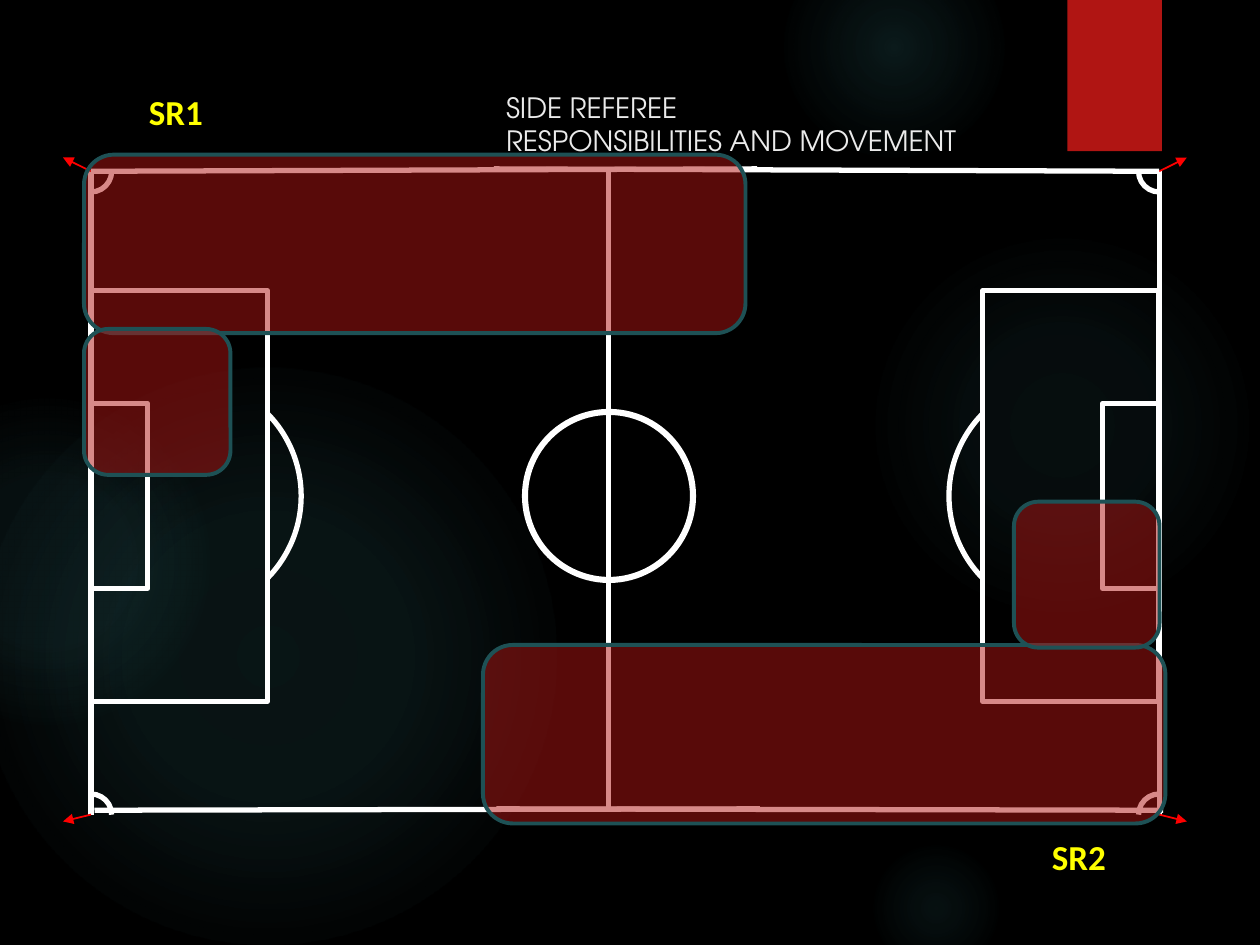
from lxml import etree
from pptx import Presentation
from pptx import util as u
from pptx.dml.color import RGBColor
from pptx.enum import shapes, text
from pptx.oxml import parse_xml
from pptx.oxml.ns import nsdecls, qn

Pt = u.Pt
Kind = shapes.MSO_SHAPE
COLORS = {
    "background": "000000", "glow": "50B9C1", "zone": "B01513", "zone edge": "1E5155",
    "marking": "FFFFFF", "arrow": "FF0000", "title": "EBEBEB", "label": "FFFF00",
}


def add_shape(kind, box, fill=None, edge=None, width=3):
    shape = slide.shapes.add_shape(kind, *[Pt(v) for v in box])
    shape.shadow.inherit = False
    if fill:
        shape.fill.solid()
        shape.fill.fore_color.rgb = RGBColor.from_string(COLORS[fill])
    else:
        shape.fill.background()
    if edge:
        shape.line.color.rgb = RGBColor.from_string(COLORS[edge])
        shape.line.width = Pt(width)
    else:
        shape.line.fill.background()
    return shape


def add_line(ends, color="marking", width=3):
    line = slide.shapes.add_connector(shapes.MSO_CONNECTOR.STRAIGHT, *[Pt(v) for v in ends])
    line.line.color.rgb = RGBColor.from_string(COLORS[color])
    line.line.width = Pt(width)
    etree.SubElement(line._element.spPr, qn("a:effectLst"))
    return line


deck = Presentation()
deck.slide_width, deck.slide_height = Pt(720), Pt(540)
slide = deck.slides.add_slide(deck.slide_layouts[5])
slide.background.fill.solid()
slide.background.fill.fore_color.rgb = RGBColor.from_string(COLORS["background"])

glows = [
    (496, 132, 222, [(0, 7), (36, 6), (69, 0)]),
    (448, -36, 126, [(0, 14), (36, 7), (73, 0)]),
    (496, 480, 78, [(0, 9), (36, 5), (66, 0)]),
    (-12, 210, 330, [(0, 11), (36, 10), (75, 0)]),
    (-66, 228, 186, [(0, 8), (36, 8), (72, 0)]),
]
for x, y, size, stops in glows:
    glow = add_shape(Kind.OVAL, (x, y, size, size))
    stop_xml = "".join(
        f'<a:gs pos="{pos * 1000}"><a:srgbClr val="{COLORS["glow"]}">'
        f'<a:alpha val="{alpha * 1000}"/></a:srgbClr></a:gs>' for pos, alpha in stops)
    gradient = parse_xml(
        f'<a:gradFill {nsdecls("a")}><a:gsLst>{stop_xml}</a:gsLst><a:path path="circle">'
        '<a:fillToRect l="50000" t="50000" r="50000" b="50000"/></a:path></a:gradFill>')
    plain = glow._element.spPr.find(qn("a:noFill"))
    plain.getparent().replace(plain, gradient)

add_shape(Kind.RECTANGLE, (610, 0, 54, 86.4), "zone")

title = slide.shapes.title
slide.shapes._spTree.append(title._element)
title.left, title.top, title.width, title.height = Pt(282), Pt(48), Pt(384), Pt(18)
title.text_frame.text = "SIDE REFEREE\vRESPONSIBILITIES AND MOVEMENT"
title.text_frame.auto_size = text.MSO_AUTO_SIZE.NONE
title.text_frame.vertical_anchor = text.MSO_ANCHOR.TOP
heading = title.text_frame.paragraphs[0]
heading.alignment = text.PP_ALIGN.LEFT
for run in heading.runs:
    run.font.size = Pt(16)
    run.font.name = "TeX Gyre Adventor"
    run.font.color.rgb = RGBColor.from_string(COLORS["title"])

left, right, top, bottom = 52, 662.4, 97.9, 465.5
middle = 283.4
corner_radius, arc_radius = 11.8, 67

for goal_line in (left, right):
    add_line((goal_line, top, goal_line, bottom))
    for depth, height in ((100.8, 234.7), (32.4, 105.8)):
        x = goal_line if goal_line == left else goal_line - depth
        add_shape(Kind.RECTANGLE, (x, middle - height / 2, depth, height), edge="marking")

arcs = [
    (105.1, middle, arc_radius, 315.7, 44.3),
    (609.3, middle, arc_radius, 135.7, 224.3),
    (left, top, corner_radius, 0, 90),
    (right, top, corner_radius, 90, 180),
    (right, bottom, corner_radius, 180, 270),
    (left, bottom, corner_radius, 270, 0),
]
for x, y, radius, start, end in arcs:
    arc = add_shape(Kind.ARC, (x - radius, y - radius, 2 * radius, 2 * radius), edge="marking")
    arc.adjustments[0], arc.adjustments[1] = start * 0.6, end * 0.6

for x, outer_x in ((left, 36), (right, 678.2)):
    for y, outer_y in ((top, 90), (bottom, 469.4)):
        arrow = add_line((x, y, outer_x, outer_y), "arrow", 1)
        etree.SubElement(arrow.line._get_or_add_ln(), qn("a:tailEnd"), type="triangle")

touch_lines = [
    (left, 97.9, 432.7, 96.5), (right, 97.9, 282.2, 96.5),
    (54, 463, 434.2, 462.2), (664.6, 463, 283.7, 462.2),
]
for ends in touch_lines:
    add_line(ends)
add_line((347.8, 95.8, 347.8, 462.2))
add_shape(Kind.OVAL, (300, 235.4, 96, 96), edge="marking", width=3.5)

zones = [
    (48, 88.4, 378, 102), (276, 368.6, 390, 102),
    (48, 188, 83.7, 83.4), (579.4, 286.7, 83.2, 83.4),
]
for box in zones:
    zone = add_shape(Kind.ROUNDED_RECTANGLE, box, "zone", "zone edge", 2.25)
    zone.adjustments[0] = 0.167
    tint = zone._element.spPr.find(qn("a:solidFill"))[0]
    etree.SubElement(tint, qn("a:alpha"), val="50000")

for name, x, y in (("SR1", 78, 48), ("SR2", 594, 474)):
    referee = slide.shapes.add_textbox(Pt(x), Pt(y), Pt(53.3), Pt(31))
    referee.text_frame.text = name
    referee.text_frame.word_wrap = False
    referee.text_frame.auto_size = text.MSO_AUTO_SIZE.SHAPE_TO_FIT_TEXT
    font = referee.text_frame.paragraphs[0].runs[0].font
    font.name, font.size, font.bold = "Calibri", Pt(20), True
    font.color.rgb = RGBColor.from_string(COLORS["label"])

deck.save("out.pptx")
